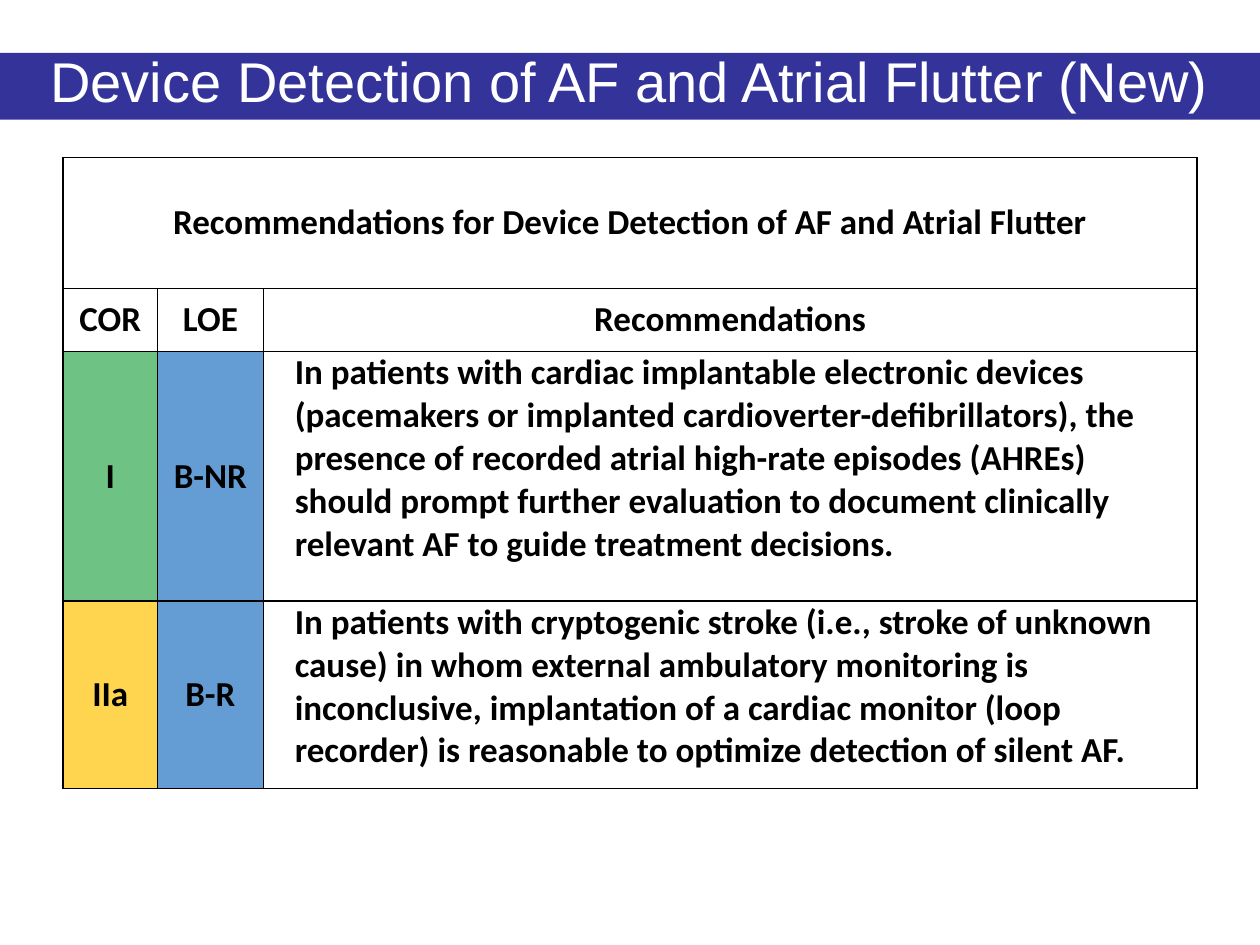
from lxml.etree import SubElement
from pptx import Presentation
from pptx.dml.color import RGBColor
from pptx.enum.text import MSO_ANCHOR as Anchor, MSO_AUTO_SIZE as Fit, PP_ALIGN as Align
from pptx.oxml.ns import qn
from pptx.util import Inches, Pt

NAVY, WHITE, BLACK = "333399", "FFFFFF", "000000"
GREEN, BLUE, GOLD = "6EC284", "649DD4", "FFD54F"

TITLE = "Device Detection of AF and Atrial Flutter (New)"
HEAD = "Recommendations for Device Detection of AF and Atrial Flutter"
LABELS = ("COR", "LOE", "Recommendations")
ADVICE = [
    (("I", GREEN), ("B-NR", BLUE),
     "In patients with cardiac implantable electronic devices (pacemakers or "
     "implanted cardioverter-defibrillators), the presence of recorded atrial "
     "high-rate episodes (AHREs) should prompt further evaluation to document "
     "clinically relevant AF to guide treatment decisions."),
    (("IIa", GOLD), ("B-R", BLUE),
     "In patients with cryptogenic stroke (i.e., stroke of unknown cause) in "
     "whom external ambulatory monitoring is inconclusive, implantation of a "
     "cardiac monitor (loop recorder) is reasonable to optimize detection of "
     "silent AF."),
]
COLS = (0.75, 0.84, 7.41)
ROWS = (1.04, 0.5, 1.98, 1.49)


def color(code):
    return RGBColor.from_string(code)


def style(para, face, size, ink, bold=False):
    font = para.font
    font.name, font.size, font.bold = face, Pt(size), bold
    font.color.rgb = color(ink)


def add_title(slide, left, top, width, height):
    title = slide.shapes.title
    title.left, title.top = Inches(left), Inches(top)
    title.width, title.height = Inches(width), Inches(height)
    title.fill.solid()
    title.fill.fore_color.rgb = color(NAVY)
    frame = title.text_frame
    frame.text = TITLE
    frame.word_wrap = True
    frame.auto_size = Fit.NONE
    frame.vertical_anchor = Anchor.MIDDLE
    para = frame.paragraphs[0]
    para.alignment = Align.CENTER
    para.line_spacing = 0.8
    style(para, "Arial", 32, WHITE)


def add_border(cell):
    props = cell._tc.get_or_add_tcPr()
    for side in ("lnL", "lnR", "lnT", "lnB"):
        line = SubElement(props, qn(f"a:{side}"), w=str(Pt(1)))
        fill = SubElement(line, qn("a:solidFill"))
        SubElement(fill, qn("a:srgbClr"), val=BLACK)


def set_cell(cell, text, fill=None, body=False):
    """Write one cell; body cells are left aligned, indented and at the top."""
    cell.text = text
    cell.margin_left = cell.margin_right = Inches(0.07)
    cell.margin_top = cell.margin_bottom = 0
    cell.vertical_anchor = Anchor.TOP if body else Anchor.MIDDLE
    para = cell.text_frame.paragraphs[0]
    para.alignment = Align.LEFT if body else Align.CENTER
    if body:
        para._p.get_or_add_pPr().set("marL", str(Inches(0.18)))
    style(para, "Calibri", 20, BLACK, bold=True)
    if fill:
        cell.fill.solid()
        cell.fill.fore_color.rgb = color(fill)
    else:
        cell.fill.background()


def add_grid(slide, left, top):
    frame = slide.shapes.add_table(
        len(ROWS), len(COLS), Inches(left), Inches(top),
        Inches(sum(COLS)), Inches(sum(ROWS)))
    table = frame.table
    table.first_row = table.horz_banding = False
    for col, width in zip(table.columns, COLS):
        col.width = Inches(width)
    for row, height in zip(table.rows, ROWS):
        row.height = Inches(height)
    for cell in table.iter_cells():
        add_border(cell)

    table.cell(0, 0).merge(table.cell(0, len(COLS) - 1))
    set_cell(table.cell(0, 0), HEAD)
    for c, label in enumerate(LABELS):
        set_cell(table.cell(1, c), label)
    for r, (cor, loe, text) in enumerate(ADVICE, start=2):
        set_cell(table.cell(r, 0), *cor)
        set_cell(table.cell(r, 1), *loe)
        set_cell(table.cell(r, 2), text, body=True)


def main():
    deck = Presentation()
    deck.slide_width, deck.slide_height = Inches(10), Inches(7.5)
    slide = deck.slides.add_slide(deck.slide_layouts.get_by_name("Title Only"))
    add_title(slide, 0, 0.42, 10, 0.53)
    add_grid(slide, 0.5, 1.25)
    deck.save("out.pptx")


if __name__ == "__main__":
    main()
